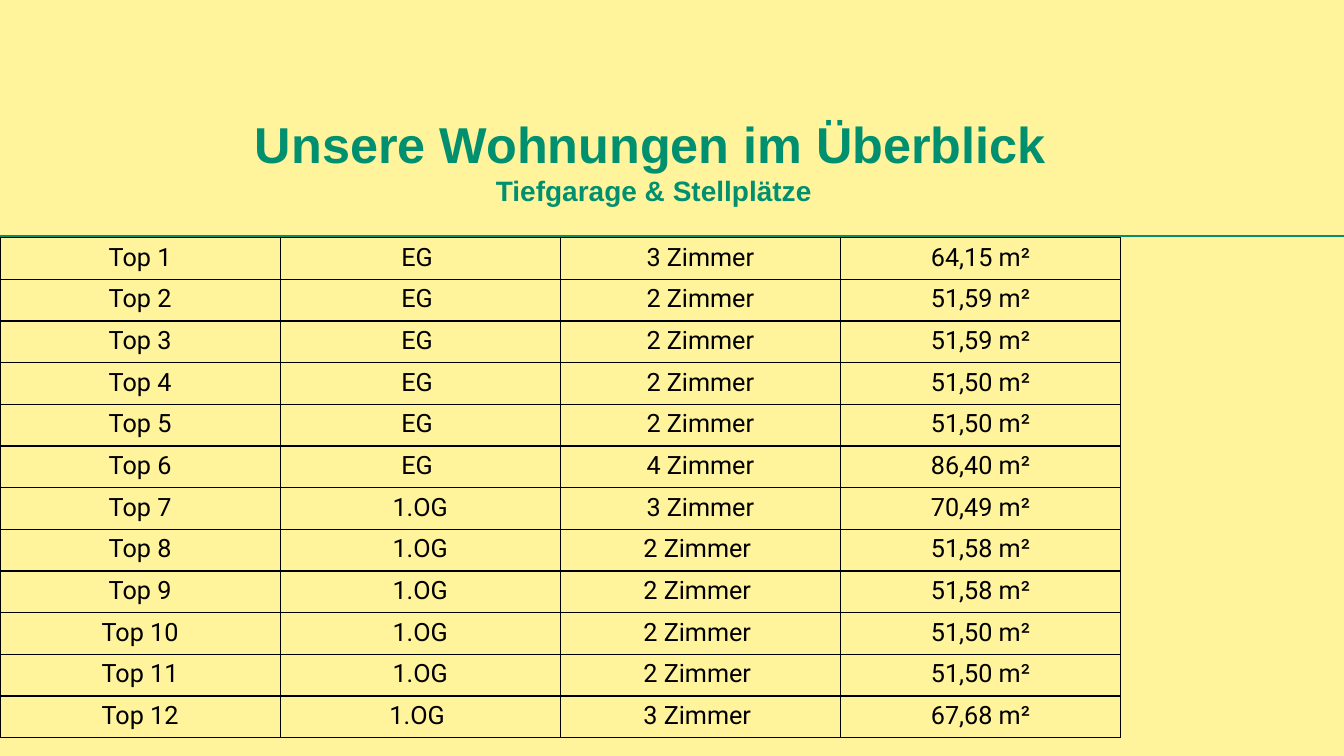
"""Builds the slide listing the apartments with floor, rooms and area."""
from lxml import etree
from pptx import Presentation
from pptx import util as u
from pptx.dml.color import RGBColor
from pptx.enum import shapes, text
from pptx.oxml import parse_xml
from pptx.oxml.ns import nsdecls, qn

HEADINGS = [("Unsere Wohnungen im Überblick ", 36), ("Tiefgarage & Stellplätze ", 20)]
APARTMENTS = [
    ("Top 1", "EG ", "3 Zimmer", "64,15 m²"),
    ("Top 2", "EG ", "2 Zimmer", "51,59 m²"),
    ("Top 3", "EG ", "2 Zimmer", "51,59 m²"),
    ("Top 4", "EG ", "2 Zimmer", "51,50 m²"),
    ("Top 5", "EG ", "2 Zimmer", "51,50 m²"),
    ("Top 6", "EG ", "4 Zimmer", "86,40 m²"),
    ("Top 7", "1.OG", "3 Zimmer", "70,49 m²"),
    ("Top 8", "1.OG", "2 Zimmer ", "51,58 m²"),
    ("Top 9", "1.OG", "2 Zimmer ", "51,58 m²"),
    ("Top 10", "1.OG", "2 Zimmer ", "51,50 m²"),
    ("Top 11", "1.OG", "2 Zimmer ", "51,50 m²"),
    ("Top 12", "1.OG ", "3 Zimmer ", "67,68 m²"),
]
COLORS = {"background": "FFF49B", "green": "00906F", "black": "000000"}
SLIDE_W, SLIDE_H = u.Cm(33.87), u.Cm(19.05)
RULE_Y, TABLE_Y = u.Cm(5.94), u.Cm(5.99)
COL_W, ROW_H = u.Cm(7.06), u.Cm(1.05)


def rgb(name):
    return RGBColor.from_string(COLORS[name])


def add_text(p, words, font, size, color, bold=False):
    p.alignment = text.PP_ALIGN.CENTER
    r = p.add_run()
    r.text = words
    r.font.name, r.font.size, r.font.bold = font, u.Pt(size), bold
    r.font.color.rgb = rgb(color)


def add_borders(cell):
    tc_pr = cell._tc.get_or_add_tcPr()
    for i, side in enumerate("LRTB"):
        tc_pr.insert(i, parse_xml(
            f'<a:ln{side} {nsdecls("a")} w="{u.Pt(1)}"><a:solidFill>'
            f'<a:srgbClr val="{COLORS["black"]}"/></a:solidFill></a:ln{side}>'))


def add_rule(s):
    rule = s.shapes.add_connector(shapes.MSO_CONNECTOR.STRAIGHT, 0, RULE_Y, SLIDE_W, RULE_Y)
    rule.line.color.rgb = rgb("green")
    rule.line.width = u.Pt(1.5)
    etree.SubElement(rule._element.spPr, qn("a:effectLst"))


def add_headings(s):
    sp = s.shapes.add_textbox(u.Cm(3.1), u.Cm(2.72), u.Cm(26.95), u.Cm(2.64))
    tf = sp.text_frame
    tf.word_wrap = True
    tf.auto_size = text.MSO_AUTO_SIZE.SHAPE_TO_FIT_TEXT
    for i, (words, size) in enumerate(HEADINGS):
        p = tf.add_paragraph() if i else tf.paragraphs[0]
        add_text(p, words, "Arial", size, "green", True)


def add_apartments(s):
    rows, cols = len(APARTMENTS), len(APARTMENTS[0])
    table = s.shapes.add_table(rows, cols, 0, TABLE_Y, COL_W * cols, ROW_H * rows).table
    table.first_row = table.horz_banding = False
    for i, apartment in enumerate(APARTMENTS):
        for j, words in enumerate(apartment):
            cell = table.cell(i, j)
            cell.fill.background()
            add_borders(cell)
            add_text(cell.text_frame.paragraphs[0], words, "Roboto", 18, "black")


def main():
    prs = Presentation()
    prs.slide_width, prs.slide_height = SLIDE_W, SLIDE_H
    s = prs.slides.add_slide(prs.slide_layouts[6])
    s.background.fill.solid()
    s.background.fill.fore_color.rgb = rgb("background")
    add_rule(s)
    add_headings(s)
    add_apartments(s)
    prs.save("out.pptx")


if __name__ == "__main__":
    main()
